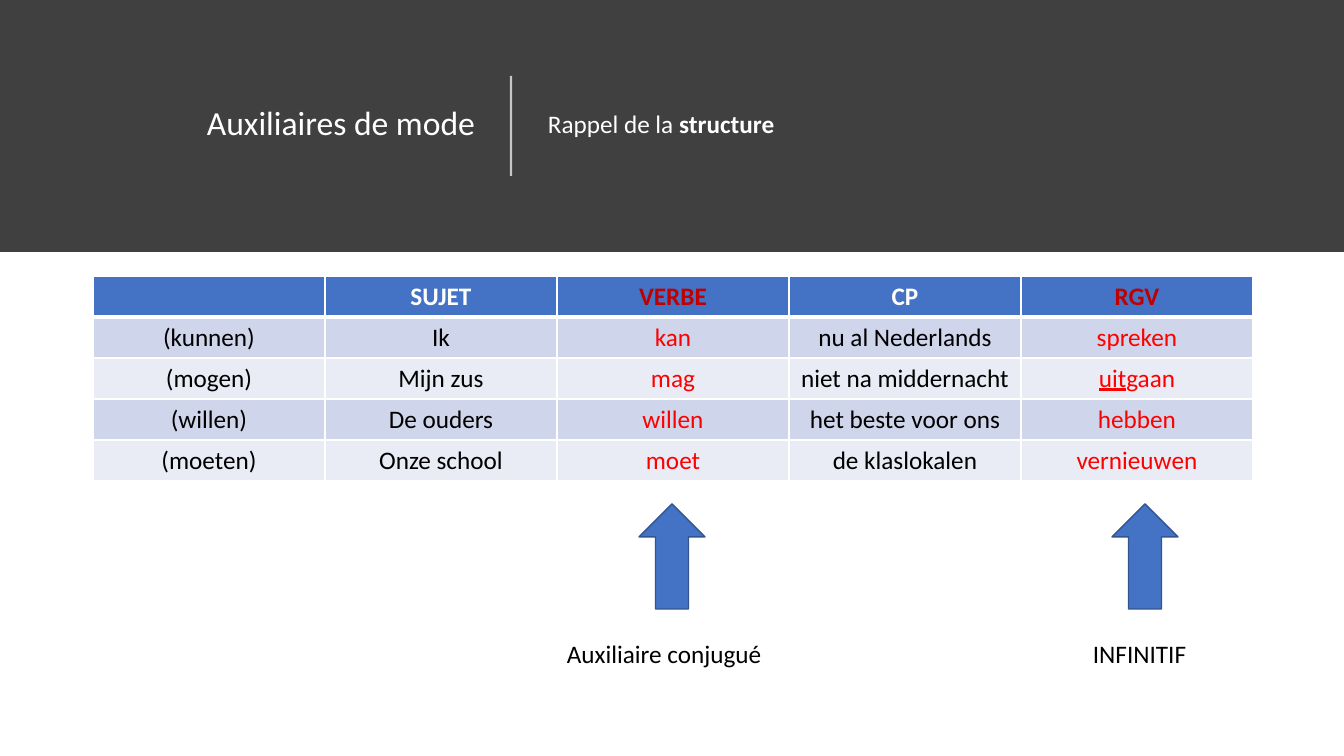
from lxml import etree
from pptx import Presentation
from pptx import util as u
from pptx.dml.color import RGBColor
from pptx.enum import shapes, text
from pptx.oxml import ns

SCALE = 914400 / 100.8  # EMU per px
WHITE, BLACK, BLUE, GREY = "FFFFFF", "000000", "4472C4", "404040"
RED, DARK_RED, ARROW_EDGE = "FF0000", "C00000", "325491"
BANDS = ["CFD5EA", "E9EBF5"]


def px(length):
    return u.Emu(round(length * SCALE))


def rgb(colour):
    return RGBColor.from_string(colour)


class SlideBuilder:
    font = "Calibri"
    body_size = 18

    def __init__(self, slide):
        self.slide = slide

    def add_runs(self, paragraph, runs, size, colour, align):
        """Fill a paragraph from (text, bold, underline) triples."""
        paragraph.alignment = align
        for wording, bold, underline in runs:
            run = paragraph.add_run()
            run.text = wording
            run.font.name = self.font
            run.font.size = u.Pt(size)
            run.font.color.rgb = rgb(colour)
            run.font.bold = bold
            run.font.underline = underline

    def shape(self, kind, left, top, width, height, fill, edge=None):
        shape = self.slide.shapes.add_shape(
            kind, px(left), px(top), px(width), px(height))
        shape.shadow.inherit = False
        shape.fill.solid()
        shape.fill.fore_color.rgb = rgb(fill)
        if edge:
            shape.line.color.rgb = rgb(edge)
            shape.line.width = u.Pt(1)
        else:
            shape.line.fill.background()

    def text(self, left, top, width, height, runs, size=body_size, colour=BLACK,
             align=text.PP_ALIGN.LEFT, anchor=text.MSO_ANCHOR.TOP,
             line_spacing=None, wrap=True):
        box = self.slide.shapes.add_textbox(px(left), px(top), px(width), px(height))
        frame = box.text_frame
        frame.word_wrap = wrap
        frame.vertical_anchor = anchor
        paragraph = frame.paragraphs[0]
        paragraph.line_spacing = line_spacing
        self.add_runs(paragraph, runs, size, colour, align)

    def vertical_line(self, x, top, bottom, colour, width, opacity):
        line = self.slide.shapes.add_connector(
            shapes.MSO_CONNECTOR.STRAIGHT, px(x), px(bottom), px(x), px(top))
        line.line.color.rgb = rgb(colour)
        line.line.width = u.Pt(width)
        properties = line._element.spPr
        srgb = properties.find(".//" + ns.qn("a:srgbClr"))
        etree.SubElement(srgb, ns.qn("a:alpha"), val=str(opacity * 1000))
        etree.SubElement(properties, ns.qn("a:effectLst"))

    def border(self, cell, side, width):
        properties = cell._tc.get_or_add_tcPr()
        line = etree.SubElement(properties, ns.qn("a:ln" + side), w=str(u.Pt(width)))
        fill = etree.SubElement(line, ns.qn("a:solidFill"))
        etree.SubElement(fill, ns.qn("a:srgbClr"), val=WHITE)

    def table(self, left, top, column_width, row_height, rows, red_columns):
        """Draw a banded table; each cell is a list of (text, underline) pairs."""
        columns = len(rows[0])
        table = self.slide.shapes.add_table(
            len(rows), columns, px(left), px(top),
            px(column_width * columns), px(row_height * len(rows))).table
        for column in table.columns:
            column.width = px(column_width)
        for row_index, row in enumerate(rows):
            table.rows[row_index].height = px(row_height)
            header = row_index == 0
            fill = BLUE if header else BANDS[(row_index - 1) % 2]
            plain, accent = (WHITE, DARK_RED) if header else (BLACK, RED)
            for column_index, pairs in enumerate(row):
                cell = table.cell(row_index, column_index)
                self.border(cell, "L", 1)
                self.border(cell, "R", 1)
                self.border(cell, "T", 3 if row_index == 1 else 1)
                self.border(cell, "B", 3 if header else 1)
                cell.fill.solid()
                cell.fill.fore_color.rgb = rgb(fill)
                colour = accent if column_index in red_columns else plain
                runs = [(wording, header, underline) for wording, underline in pairs]
                self.add_runs(cell.text_frame.paragraphs[0], runs, self.body_size,
                              colour, text.PP_ALIGN.CENTER)


def plain_row(*wordings):
    return [[(wording, False)] if wording else [] for wording in wordings]


def main():
    presentation = Presentation()
    presentation.slide_width = px(1344)
    presentation.slide_height = px(756)
    builder = SlideBuilder(presentation.slides.add_slide(presentation.slide_layouts[6]))

    builder.shape(shapes.MSO_SHAPE.RECTANGLE, 0, 0, 1344, 252, GREY)
    heading = {"colour": WHITE, "anchor": text.MSO_ANCHOR.MIDDLE, "line_spacing": 0.9}
    builder.text(88, 52, 397, 146, [("Auxiliaires de mode", False, False)], size=24,
                 align=text.PP_ALIGN.RIGHT, **heading)
    builder.vertical_line(511, 76, 176, WHITE, 1.5, 70)
    builder.text(538, 45, 718, 161,
                 [("Rappel de la ", False, False), ("structure", True, False)],
                 **heading)

    rows = [
        plain_row("", "SUJET", "VERBE", "CP", "RGV"),
        plain_row("(kunnen)", "Ik", "kan", "nu al Nederlands", "spreken"),
        plain_row("(mogen)", "Mijn zus", "mag", "niet na middernacht")
        + [[("uit", True), ("gaan", False)]],
        plain_row("(willen)", "De ouders", "willen", "het beste voor ons", "hebben"),
        plain_row("(moeten)", "Onze school", "moet", "de klaslokalen", "vernieuwen"),
    ]
    builder.table(93, 276, 232, 41, rows, red_columns={2, 4})

    labels = [(639, 557, 230, "Auxiliaire conjugué"), (1112, 1083, 124, "INFINITIF")]
    for arrow_left, label_left, label_width, label in labels:
        builder.shape(shapes.MSO_SHAPE.UP_ARROW, arrow_left, 504, 66, 105,
                      BLUE, ARROW_EDGE)
        builder.text(label_left, 633, label_width, 40, [(label, False, False)],
                     wrap=False)

    presentation.save("out.pptx")


if __name__ == "__main__":
    main()
